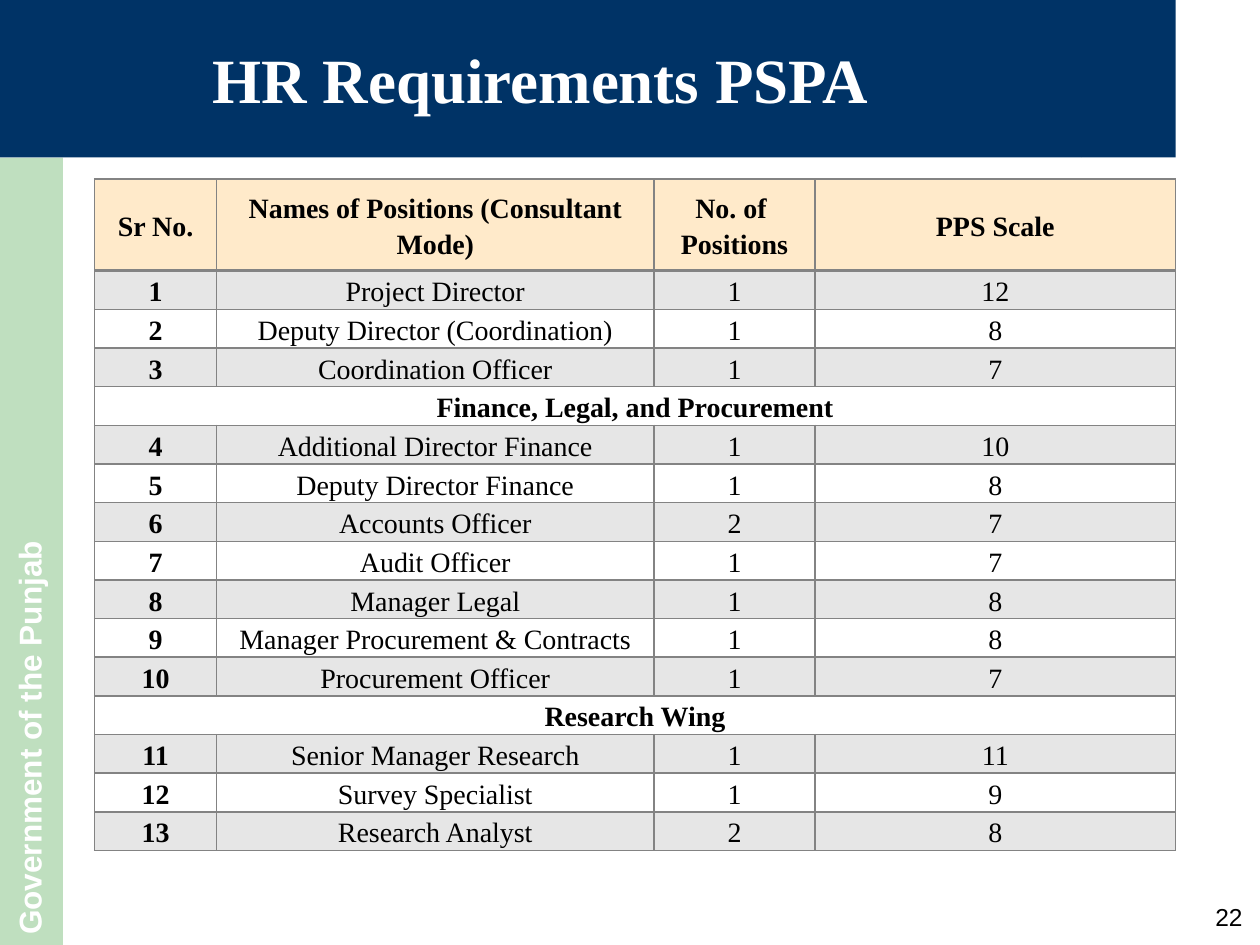
from lxml import etree
from pptx import Presentation
from pptx.dml.color import RGBColor
from pptx.enum.shapes import MSO_SHAPE
from pptx.enum.text import MSO_ANCHOR, PP_ALIGN
from pptx.oxml.ns import qn
from pptx.util import Inches, Pt

RECTANGLE = MSO_SHAPE.RECTANGLE
TOP, MIDDLE = MSO_ANCHOR.TOP, MSO_ANCHOR.MIDDLE
LEFT, CENTER, RIGHT = PP_ALIGN.LEFT, PP_ALIGN.CENTER, PP_ALIGN.RIGHT
SERIF, SANS = "Times New Roman", "Arial"
COLORS = {
    "navy": "003366", "green": "008000", "white": "FFFFFF",
    "black": "000000", "cream": "FFEACA", "gray": "838383",
}

# Lengths are percentages of the slide's width or height
WIDTH, HEIGHT = Inches(10), Inches(7.5)
BANNER_WIDTH, BANNER_HEIGHT = 85.8, 16.67
COLUMN_WIDTHS = [9.7, 34.7, 12.8, 28.6]
HEADER_HEIGHT, FIRST_HEIGHT, ROW_HEIGHT = 9.73, 3.47, 4.09

HEADER = ["Sr No.", "Names of Positions (Consultant Mode)",
          "No. of \vPositions", "PPS Scale"]
# Each section: heading, then position, number of posts, scale
SECTIONS = [
    (None, [
        ("Project Director", 1, 12),
        ("Deputy Director (Coordination)", 1, 8),
        ("Coordination Officer", 1, 7),
    ]),
    ("Finance, Legal, and Procurement", [
        ("Additional Director Finance", 1, 10),
        ("Deputy Director Finance", 1, 8),
        ("Accounts Officer", 2, 7),
        ("Audit Officer", 1, 7),
        ("Manager Legal", 1, 8),
        ("Manager Procurement & Contracts", 1, 8),
        ("Procurement Officer", 1, 7),
    ]),
    ("Research Wing", [
        ("Senior Manager Research", 1, 11),
        ("Survey Specialist", 1, 9),
        ("Research Analyst", 2, 8),
    ]),
]


def across(percent):
    return round(WIDTH * percent / 100)


def down(percent):
    return round(HEIGHT * percent / 100)


def place(left, top, width, height):
    return across(left), down(top), across(width), down(height)


def color(name):
    return RGBColor.from_string(COLORS[name])


def fade(element, percent):
    """Give the solid fill inside an element partial opacity."""
    shade = next(element.iter(qn("a:srgbClr")))
    etree.SubElement(shade, qn("a:alpha"), val=str(percent * 1000))


def write(frame, text, font, size, ink, align, bold=False):
    frame.word_wrap = True
    frame.text = text
    para = frame.paragraphs[0]
    para.alignment = align
    para.font.name, para.font.size, para.font.bold = font, Pt(size), bold
    para.font.color.rgb = color(ink)
    return para


def add_block(page, area, fill):
    block = page.shapes.add_shape(RECTANGLE, *place(*area))
    block.shadow.inherit = False
    block.fill.solid()
    block.fill.fore_color.rgb = color(fill)
    block.line.fill.background()
    return block


def add_sidebar(page):
    area = (0, BANNER_HEIGHT, 5, 100 - BANNER_HEIGHT)
    sidebar = add_block(page, area, "green")
    fade(sidebar.fill._xPr, 25)
    frame = sidebar.text_frame
    write(frame, "Government of the Punjab", SANS, 18, "white", LEFT, True)
    frame.vertical_anchor = TOP
    frame.margin_left = frame.margin_top = Inches(0.08)
    frame.margin_right = frame.margin_bottom = Inches(0.08)
    frame._txBody.bodyPr.set("vert", "vert270")


def set_borders(cell, bottom):
    properties = cell._tc.get_or_add_tcPr()
    widths = {"a:lnL": 1, "a:lnR": 1, "a:lnT": 1, "a:lnB": bottom}
    for index, (side, width) in enumerate(widths.items()):
        line = etree.Element(qn(side), w=str(Pt(width)))
        paint = etree.SubElement(line, qn("a:solidFill"))
        etree.SubElement(paint, qn("a:srgbClr"), val=COLORS["gray"])
        properties.insert(index, line)


def style_cell(cell, fill, opacity=100, bottom=1):
    cell.vertical_anchor = MIDDLE
    cell.margin_left = cell.margin_right = Inches(0.04)
    cell.margin_top = cell.margin_bottom = 0
    if fill:
        cell.fill.solid()
        cell.fill.fore_color.rgb = color(fill)
        if opacity < 100:
            fade(cell._tc.tcPr, opacity)
    else:
        cell.fill.background()
    set_borders(cell, bottom)


def table_rows():
    """List the rows; a section heading is a row of one value."""
    rows, serial = [HEADER], 0
    for heading, positions in SECTIONS:
        if heading:
            rows.append([heading])
        for position in positions:
            serial += 1
            rows.append([serial, *position])
    return rows


def add_positions_table(page):
    rows = table_rows()
    heights = [HEADER_HEIGHT, FIRST_HEIGHT] + [ROW_HEIGHT] * (len(rows) - 2)
    area = place(7.5, 18.93, sum(COLUMN_WIDTHS), sum(heights))
    table = page.shapes.add_table(len(rows), len(COLUMN_WIDTHS), *area).table
    for column, width in zip(table.columns, COLUMN_WIDTHS):
        column.width = across(width)

    for index, values in enumerate(rows):
        table.rows[index].height = down(heights[index])
        # Header, then gray bands on every other row
        for cell in table.rows[index].cells:
            if index == 0:
                style_cell(cell, "cream", bottom=2)
            else:
                style_cell(cell, "gray" if index % 2 else None, 20)
        if len(values) == 1:
            table.cell(index, 0).merge(table.cell(index, len(COLUMN_WIDTHS) - 1))
        for column, value in enumerate(values):
            bold = index == 0 or column == 0
            para = write(table.cell(index, column).text_frame, str(value),
                         SERIF, 16, "black", CENTER, bold)
            para.line_spacing = 1.15


def main():
    deck = Presentation()
    deck.slide_width, deck.slide_height = WIDTH, HEIGHT
    page = deck.slides.add_slide(deck.slide_layouts[6])

    # Banner corner, side strip and title
    add_block(page, (BANNER_WIDTH, 0, 7.5, BANNER_HEIGHT), "navy")
    add_sidebar(page)
    title = add_block(page, (0, 0, BANNER_WIDTH, BANNER_HEIGHT), "navy")
    title.text_frame.vertical_anchor = MIDDLE
    write(title.text_frame, "HR Requirements PSPA", SERIF, 36, "white", CENTER, True)

    # Page number
    number = page.shapes.add_textbox(*place(87.9, 94.8, 11.7, 4.13))
    write(number.text_frame, "22", SANS, 14, "black", RIGHT)

    add_positions_table(page)
    deck.save("out.pptx")


if __name__ == "__main__":
    main()
